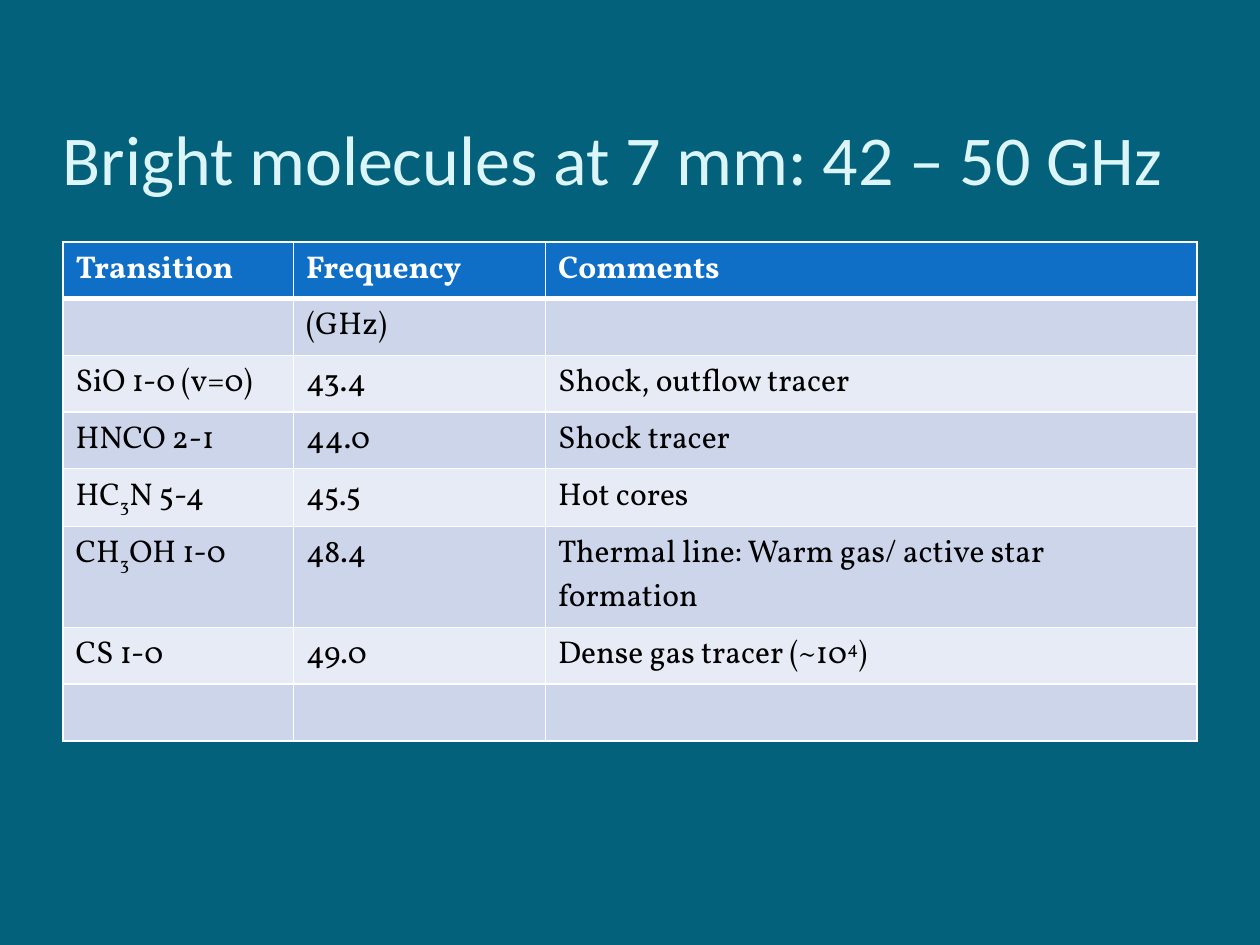
from dataclasses import dataclass

from lxml.etree import SubElement
from pptx import Presentation
from pptx.dml.color import RGBColor
from pptx.enum.text import MSO_ANCHOR
from pptx.oxml.ns import qn
from pptx.util import Inches, Pt

BODY_FONT = "Vollkorn"
BODY_SIZE = 18
WHITE = "FFFFFF"
HEADER_FILL = "0F6FC6"
BAND_FILLS = ("E7EBF5", "CCD5EA")
COLUMN_WIDTHS = (1.83, 2, 5.17)


@dataclass(frozen=True)
class Part:
    text: str
    baseline: int = 0


@dataclass(frozen=True)
class Line:
    transition: tuple[Part, ...] = ()
    frequency: tuple[Part, ...] = ()
    comments: tuple[Part, ...] = ()
    height: float = 0.45


def plain(text: str) -> tuple[Part, ...]:
    return (Part(text),)


LINES = (
    Line(plain("Transition"), plain("Frequency"), plain("Comments")),
    Line(frequency=plain("(GHz)")),
    Line(plain("SiO 1-0 (v=0)"), plain("43.4"), plain("Shock, outflow tracer")),
    Line(plain("HNCO 2-1"), plain("44.0"), plain("Shock tracer")),
    Line(
        (Part("HC"), Part("3", -25), Part("N 5-4")),
        plain("45.5"),
        plain("Hot cores"),
        height=0.46,
    ),
    Line(
        (Part("CH"), Part("3", -25), Part("OH 1-0")),
        plain("48.4"),
        plain("Thermal line: Warm gas/ active star formation"),
        height=0.8,
    ),
    Line(
        plain("CS 1-0"),
        plain("49.0"),
        (Part("Dense gas tracer (~10"), Part("4", 30), Part(")")),
    ),
    Line(),
)


def color(hex_value: str) -> RGBColor:
    return RGBColor.from_string(hex_value)


def add_part(paragraph, part: Part, font: str, size: float, hex_value: str, bold=False) -> None:
    run = paragraph.add_run()
    run.text = part.text
    run.font.name = font
    run.font.size = Pt(size)
    run.font.bold = bold
    run.font.color.rgb = color(hex_value)
    if part.baseline:
        run._r.get_or_add_rPr().set("baseline", str(part.baseline * 1000))


def set_empty_font(paragraph) -> None:
    end = SubElement(paragraph._p, qn("a:endParaRPr"), sz=str(BODY_SIZE * 100))
    SubElement(end, qn("a:latin"), typeface=BODY_FONT)


def set_borders(cell, top: float, bottom: float) -> None:
    properties = cell._tc.get_or_add_tcPr()
    for side, width in (("L", 1), ("R", 1), ("T", top), ("B", bottom)):
        border = SubElement(properties, qn(f"a:ln{side}"), w=str(Pt(width)))
        fill = SubElement(border, qn("a:solidFill"))
        SubElement(fill, qn("a:srgbClr"), val=WHITE)


def fill_cell(cell, parts: tuple[Part, ...], row: int) -> None:
    header = row == 0
    set_borders(cell, top=3 if row == 1 else 1, bottom=3 if header else 1)
    cell.fill.solid()
    cell.fill.fore_color.rgb = color(HEADER_FILL if header else BAND_FILLS[row % 2])
    paragraph = cell.text_frame.paragraphs[0]
    for part in parts:
        add_part(paragraph, part, BODY_FONT, BODY_SIZE, WHITE if header else "000000", header)
    if not parts:
        set_empty_font(paragraph)


def add_title(slide, text: str) -> None:
    frame = slide.shapes.add_textbox(Inches(0.5), Inches(0.75), Inches(9), Inches(0.83)).text_frame
    frame.word_wrap = True
    frame.vertical_anchor = MSO_ANCHOR.BOTTOM
    frame.margin_left = frame.margin_right = frame.margin_bottom = Inches(0)
    frame.margin_top = Inches(0.05)
    add_part(frame.paragraphs[0], Part(text), "Calibri", 40, "DBF5F9")


def add_molecules(slide) -> None:
    molecules = slide.shapes.add_table(
        len(LINES), len(COLUMN_WIDTHS), Inches(0.5), Inches(1.92),
        Inches(sum(COLUMN_WIDTHS)), Inches(sum(line.height for line in LINES)),
    ).table
    for column, width in zip(molecules.columns, COLUMN_WIDTHS):
        column.width = Inches(width)
    for row, line in enumerate(LINES):
        molecules.rows[row].height = Inches(line.height)
        for column, parts in enumerate((line.transition, line.frequency, line.comments)):
            fill_cell(molecules.cell(row, column), parts, row)


def main() -> None:
    presentation = Presentation()
    presentation.slide_width = Inches(10)
    presentation.slide_height = Inches(7.5)
    slide = presentation.slides.add_slide(presentation.slide_layouts[6])
    slide.background.fill.solid()
    slide.background.fill.fore_color.rgb = color("04617B")
    add_title(slide, "Bright molecules at 7 mm: 42 – 50 GHz")
    add_molecules(slide)
    presentation.save("out.pptx")


if __name__ == "__main__":
    main()
